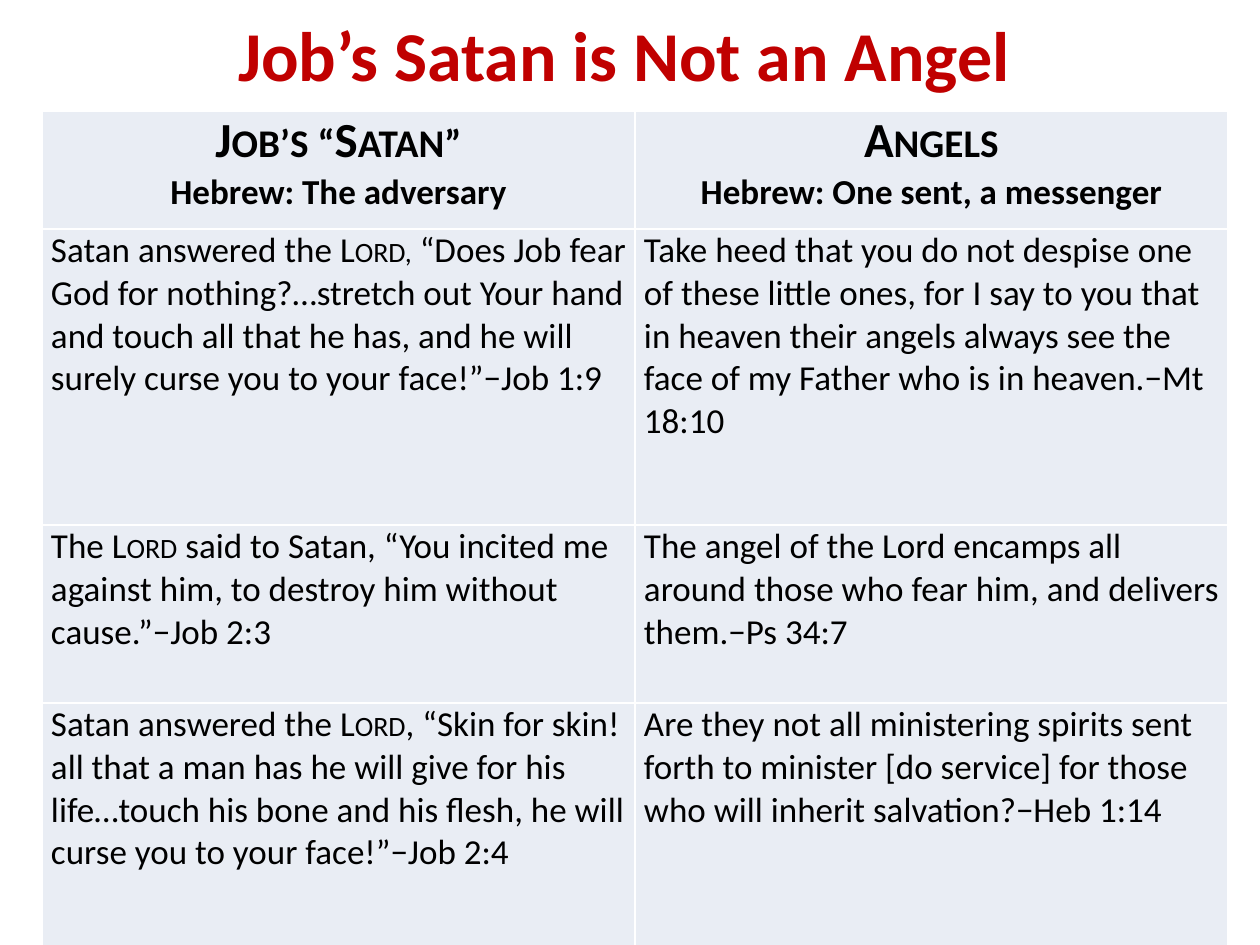
"""Build a slide comparing Job's Satan with angels in a two-column table."""
from lxml import etree
from pptx import Presentation
from pptx.dml.color import RGBColor
from pptx.enum.text import MSO_ANCHOR, PP_ALIGN
from pptx.oxml.ns import qn
from pptx.util import Emu, Pt

CENTER, LEFT, TOP = PP_ALIGN.CENTER, PP_ALIGN.LEFT, MSO_ANCHOR.TOP
SCALE = 914400 / 126
THEME = {
    "font": "Calibri",
    "title": RGBColor(0xC0, 0x00, 0x00),
    "text": RGBColor(0x00, 0x00, 0x00),
    "fill": RGBColor(0xE9, 0xED, 0xF4),
    "border": "FFFFFF",
    "title_size": Pt(40),
    "heading_size": Pt(28),
    "body_size": Pt(20),
}
SMALL_CAPS_MARK = "|"
HEADINGS = [
    ("|Job’s “Satan”|", "Hebrew: The adversary"),
    ("|Angels|", "Hebrew: One sent, a messenger"),
]
QUOTES = [
    ("Satan answered the |Lord,| “Does Job fear God for nothing?…stretch out Your hand "
     "and touch all that he has, and he will surely curse you to your face!”−Job 1:9",
     "Take heed that you do not despise one of these little ones, for I say to you that "
     "in heaven their angels always see the face of my Father who is in heaven.−Mt 18:10"),
    ("The |Lord| said to Satan, “You incited me against him, to destroy him without "
     "cause.”−Job 2:3",
     "The angel of the Lord encamps all around those who fear him, and delivers "
     "them.−Ps 34:7"),
    ("Satan answered the |Lord|, “Skin for skin! all that a man has he will give for his "
     "life…touch his bone and his flesh, he will curse you to your face!”−Job 2:4",
     "Are they not all ministering spirits sent forth to minister [do service] for those "
     "who will inherit salvation?−Heb 1:14"),
]
COLUMN_WIDTH = 593
ROW_HEIGHTS = [118, 296, 178, 296]


def px(length):
    return Emu(round(length * SCALE))


def write(paragraph, text, size, color, bold, alignment):
    paragraph.alignment = alignment
    for index, piece in enumerate(text.split(SMALL_CAPS_MARK)):
        if not piece:
            continue
        run = paragraph.add_run()
        run.text = piece
        run.font.name = THEME["font"]
        run.font.size = size
        run.font.bold = bold
        run.font.color.rgb = color
        if index % 2:
            run.font._element.set("cap", "small")


presentation = Presentation()
presentation.slide_width, presentation.slide_height = px(1260), px(945)
slide = presentation.slides.add_slide(presentation.slide_layouts[6])

table = slide.shapes.add_table(
    len(ROW_HEIGHTS), 2, px(42), px(111), px(2 * COLUMN_WIDTH), px(sum(ROW_HEIGHTS))
).table
table.first_row = False
table.horz_banding = False
for column in table.columns:
    column.width = px(COLUMN_WIDTH)
for row, height in zip(table.rows, ROW_HEIGHTS):
    row.height = px(height)

for cell in table.iter_cells():
    cell.margin_left = cell.margin_right = px(9)
    cell.margin_top = cell.margin_bottom = px(0)
    cell.vertical_anchor = TOP
    properties = cell._tc.get_or_add_tcPr()
    for side in ("a:lnL", "a:lnR", "a:lnT", "a:lnB"):
        line = etree.SubElement(properties, qn(side), w=str(Pt(1)))
        line_fill = etree.SubElement(line, qn("a:solidFill"))
        etree.SubElement(line_fill, qn("a:srgbClr"), val=THEME["border"])
    cell.fill.solid()
    cell.fill.fore_color.rgb = THEME["fill"]

for column_index, (heading, meaning) in enumerate(HEADINGS):
    text_frame = table.cell(0, column_index).text_frame
    write(text_frame.paragraphs[0], heading, THEME["heading_size"], THEME["text"], True, CENTER)
    write(text_frame.add_paragraph(), meaning, THEME["body_size"], THEME["text"], True, CENTER)

for row_index, quotes in enumerate(QUOTES, start=1):
    for column_index, quote in enumerate(quotes):
        paragraph = table.cell(row_index, column_index).text_frame.paragraphs[0]
        paragraph.space_before = paragraph.space_after = Pt(6)
        write(paragraph, quote, THEME["body_size"], THEME["text"], False, LEFT)

title = slide.shapes.add_textbox(px(64), px(21), px(1120), px(179))
title.text_frame.word_wrap = True
title.text_frame.vertical_anchor = TOP
paragraph = title.text_frame.paragraphs[0]
paragraph.line_spacing = Pt(39)
write(paragraph, "Job’s Satan is Not an Angel", THEME["title_size"], THEME["title"], True, CENTER)

presentation.save("out.pptx")
